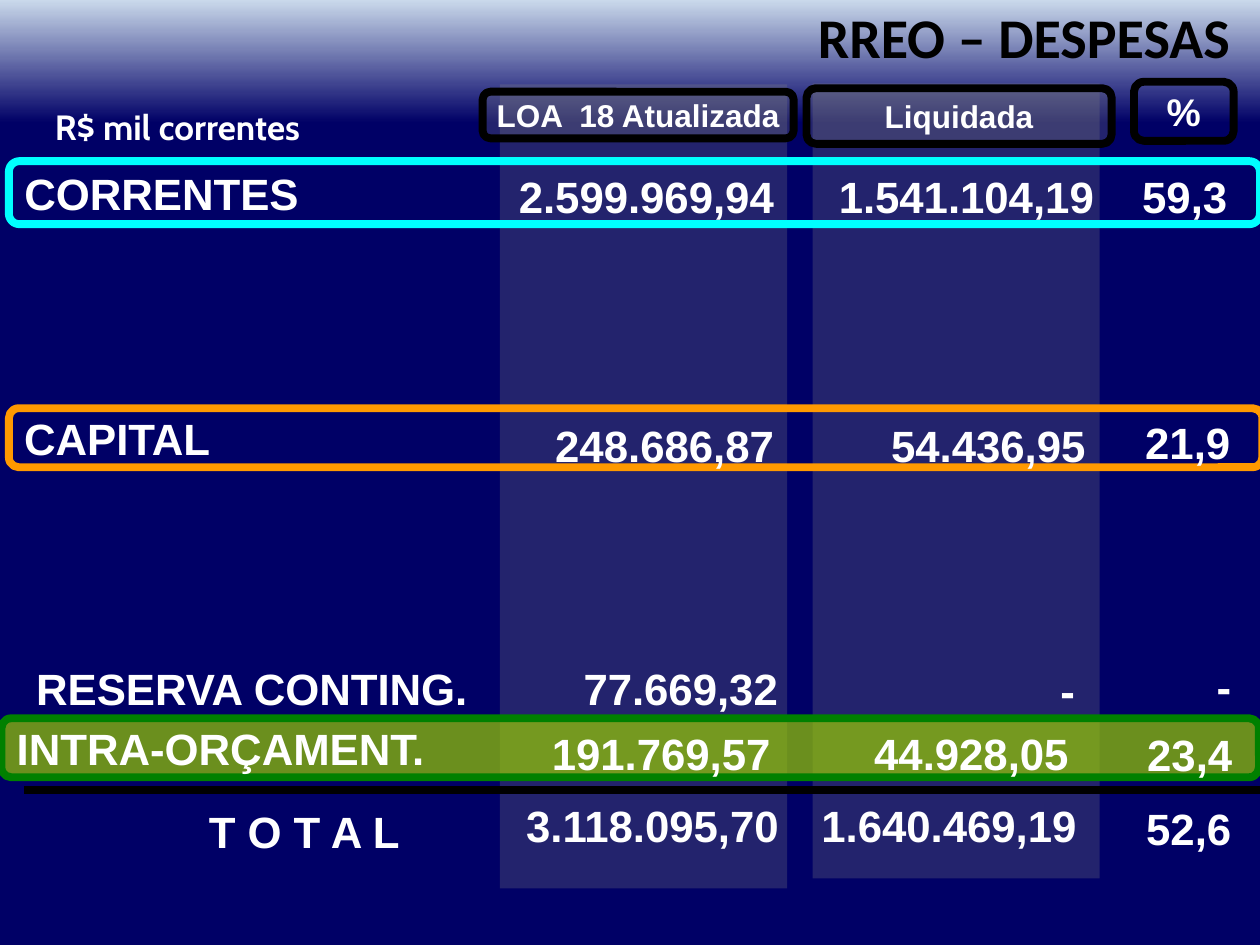
from lxml import etree
from pptx import Presentation
from pptx.dml.color import RGBColor
from pptx.enum.shapes import MSO_CONNECTOR, MSO_SHAPE
from pptx.enum.text import MSO_ANCHOR, MSO_AUTO_SIZE, PP_ALIGN
from pptx.oxml.ns import qn
from pptx.util import Cm, Pt

LEFT, CENTER, RIGHT = PP_ALIGN.LEFT, PP_ALIGN.CENTER, PP_ALIGN.RIGHT
RECTANGLE, ROUNDED = MSO_SHAPE.RECTANGLE, MSO_SHAPE.ROUNDED_RECTANGLE
WHITE, BLACK, NAVY, SKY = "FFFFFF", "000000", "000066", "CAD9EB"
VEIL = ("808080", 28)  # colour, opacity in percent
LINE_WIDTH = 4.5
CELL_HEIGHT = 1.32

# Places are left, top, width, height in centimetres.
COLUMN_BANDS = [(16.38, 1.68, 5.79, 16.03), (10.08, 1.7, 5.79, 16.21)]
HEADERS = [
    ("Liquidada", (16.26, 1.78, 6.15, 1.12), VEIL, 18),
    ("LOA  18 Atualizada", (9.73, 1.85, 6.27, 0.94), VEIL, 18),
    ("%", (22.86, 1.65, 2.01, 1.19), None, 22),
]
CAPTIONS = [
    ("R$ mil correntes", (-0.1, 2.01, 6.4, 1.12), False,
     {"name": "Cabin", "size": 20}),
    ("RREO – DESPESAS", (3.1, -0.08, 21.95, 1.63), True,
     {"name": "Calibri", "size": 32, "color": BLACK}),
]
# A label without a frame is a plain text box; cells are text, left, top, width.
ROWS = [
    {"label": "CORRENTES", "place": (0.18, 3.25, 25.22, 1.27), "line": "00FFFF",
     "cells": [("2.599.969,94", 9.65, 3.3, 6.2),
               ("1.541.104,19", 16.1, 3.3, 6.2),
               ("59,3", 22.25, 3.3, 2.74)]},
    {"label": "CAPITAL", "place": (0.18, 8.23, 25.27, 1.19), "line": "FF9900",
     "cells": [("248.686,87", 9.37, 8.31, 6.48),
               ("54.436,95", 15.65, 8.31, 6.48),
               ("21,9", 22.66, 8.26, 2.39)]},
    {"label": "RESERVA CONTING.", "place": (0.48, 13.21, 10.39, CELL_HEIGHT),
     "framed": False,
     "cells": [("77.669,32", 9.73, 13.21, 6.2),
               ("-", 15.72, 13.26, 6.2),
               ("-", 22.68, 13.18, 2.39)]},
    {"label": "INTRA-ORÇAMENT.", "place": (0.03, 14.48, 25.35, 1.19),
     "line": "008000", "fill": ("99CC00", 70),
     "cells": [("191.769,57", 10.29, 14.53, 5.49),
               ("44.928,05", 16.48, 14.53, 5.31),
               ("23,4", 22.35, 14.55, 2.74)]},
    {"label": "T O T A L", "place": (0.84, 16.15, 10.59, 1.19), "align": CENTER,
     "cells": [("3.118.095,70", 8.94, 15.98, 7.01),
               ("1.640.469,19", 14.94, 15.98, 7.01),
               ("52,6", 22.68, 16.03, 2.39)]},
]
TOTAL_RULE = (0.48, 15.93, 25.43, 15.93)


def rgb(value):
    return RGBColor.from_string(value)


def lengths(values):
    return [Cm(value) for value in values]


def write(shape, text, align, wrap, size=25, name="Arial", color=WHITE, before=0):
    frame = shape.text_frame
    frame.word_wrap = wrap
    para = frame.paragraphs[0]
    para.alignment = align
    para.space_before = Pt(before)
    span = para.add_run()
    span.text = text
    span.font.color.rgb = rgb(color)
    for key, value in {"name": name, "size": Pt(size), "bold": True}.items():
        setattr(span.font, key, value)


def add_panel(page, kind, place, fill=None, line=None):
    """Add a shape with an optional translucent fill and outline."""
    shape = page.shapes.add_shape(kind, *lengths(place))
    shape.shadow.inherit = False
    if fill:
        color, opacity = fill
        shape.fill.solid()
        shape.fill.fore_color.rgb = rgb(color)
        node = shape.fill._xPr.find(qn("a:solidFill"))[0]
        etree.SubElement(node, qn("a:alpha"), val=str(opacity * 1000))
    else:
        shape.fill.background()
    if line:
        shape.line.color.rgb = rgb(line)
        shape.line.width = Pt(LINE_WIDTH)
    else:
        shape.line.fill.background()
    shape.text_frame.vertical_anchor = MSO_ANCHOR.MIDDLE
    return shape


def add_text(page, place, text, align=RIGHT, wrap=True, **style):
    box = page.shapes.add_textbox(*lengths(place))
    write(box, text, align, wrap, **style)
    box.text_frame.auto_size = MSO_AUTO_SIZE.SHAPE_TO_FIT_TEXT


def add_row(page, row):
    align = row.get("align", LEFT)
    if row.get("framed", True):
        panel = add_panel(page, ROUNDED, row["place"], row.get("fill"), row.get("line"))
        write(panel, row["label"], align, False)
    else:
        add_text(page, row["place"], row["label"], align, before=2.5)
    for text, left, top, width in row["cells"]:
        add_text(page, (left, top, width, CELL_HEIGHT), text, before=2.5)


def paint_background(page):
    fill = page.background.fill
    fill.gradient()
    fill.gradient_angle = 270
    for stop, (position, color) in zip(fill.gradient_stops, [(0, SKY), (0.13, NAVY)]):
        stop.position = position
        stop.color.rgb = rgb(color)


def main():
    deck = Presentation()
    deck.slide_width, deck.slide_height = Cm(25.4), Cm(19.05)
    page = deck.slides.add_slide(deck.slide_layouts[6])
    paint_background(page)
    for place in COLUMN_BANDS:
        add_panel(page, RECTANGLE, place, VEIL)
    for text, place, fill, size in HEADERS:
        write(add_panel(page, ROUNDED, place, fill, BLACK), text, CENTER, False, size)
    for text, place, wrap, style in CAPTIONS:
        add_text(page, place, text, wrap=wrap, **style)
    for row in ROWS:
        add_row(page, row)
    rule = page.shapes.add_connector(MSO_CONNECTOR.STRAIGHT, *lengths(TOTAL_RULE))
    rule.line.color.rgb = rgb(BLACK)
    rule.line.width = Pt(LINE_WIDTH)
    etree.SubElement(rule._element.spPr, qn("a:effectLst"))
    deck.save("out.pptx")


if __name__ == "__main__":
    main()
